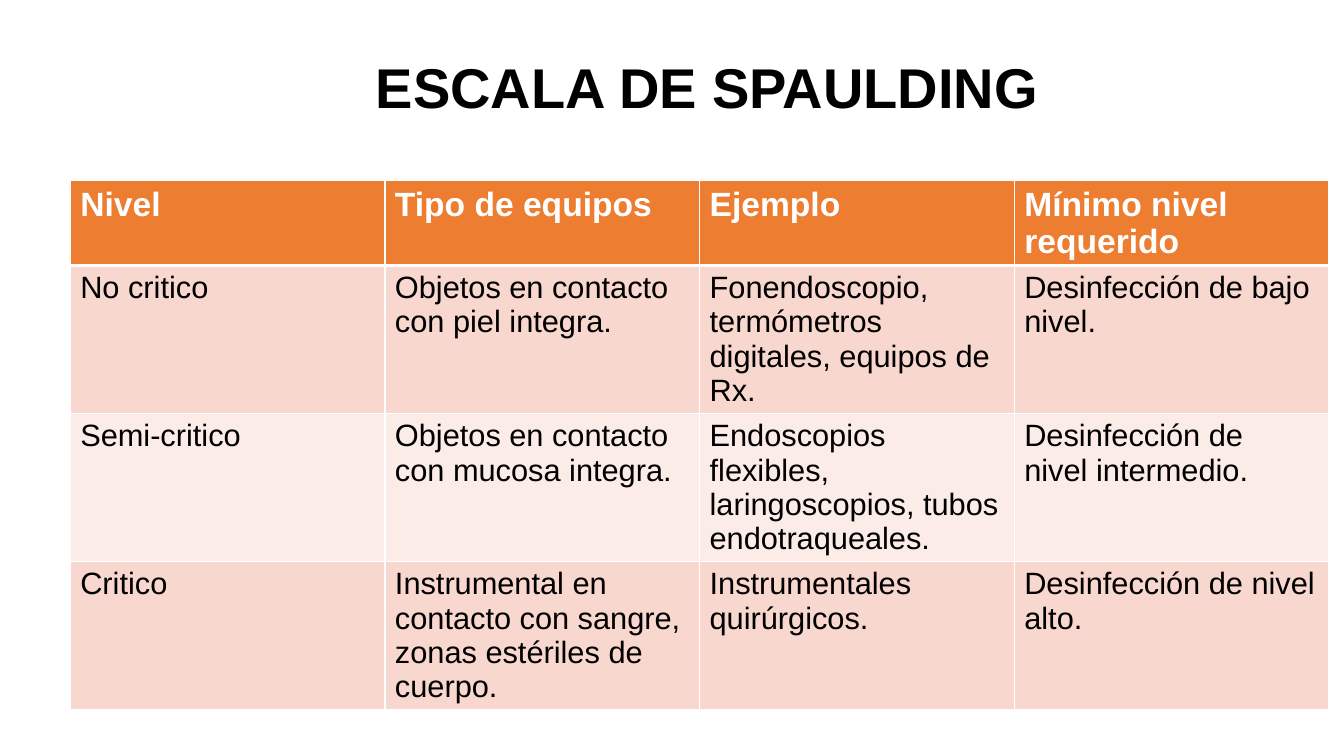
import dataclasses

import lxml.etree
import pptx
import pptx.dml.color
import pptx.enum.text
import pptx.oxml.ns
import pptx.util

Cm = pptx.util.Cm
Pt = pptx.util.Pt


@dataclasses.dataclass(frozen=True)
class Theme:
    font: str = "Arial"
    text: str = "000000"
    light: str = "FFFFFF"
    header: str = "ED7D31"
    bands: tuple = ("F8D7CE", "FCECE8")
    title_size: int = 40
    header_size: int = 24
    body_size: int = 22
    border: int = 1
    header_border: int = 3


@dataclasses.dataclass(frozen=True)
class Box:
    left: float
    top: float
    width: float
    height: float

    def lengths(self):
        return [Cm(value) for value in dataclasses.astuple(self)]


THEME = Theme()
HEADER_HEIGHT = 2.08

ROWS = (
    ("Nivel", "Tipo de equipos", "Ejemplo", "Mínimo nivel requerido"),
    ("No critico", "Objetos en contacto con piel integra.",
     "Fonendoscopio, termómetros digitales, equipos de Rx.",
     "Desinfección de bajo nivel."),
    ("Semi-critico", "Objetos en contacto con mucosa integra.",
     "Endoscopios flexibles, laringoscopios, tubos endotraqueales.",
     "Desinfección de\nnivel intermedio."),
    ("Critico", "Instrumental en contacto con sangre, zonas estériles de cuerpo.",
     "Instrumentales quirúrgicos.", "Desinfección de nivel alto."),
)


def write_text(frame, text, *, size, color=THEME.text, bold=False,
               align=pptx.enum.text.PP_ALIGN.LEFT, spacing=1.0):
    paragraph = frame.paragraphs[0]
    paragraph.text = text
    paragraph.alignment = align
    paragraph.line_spacing = spacing
    for run in paragraph.runs:
        run.font.name = THEME.font
        run.font.size = Pt(size)
        run.font.bold = bold
        run.font.color.rgb = pptx.dml.color.RGBColor.from_string(color)


def fill_cell(cell, color):
    cell.fill.solid()
    cell.fill.fore_color.rgb = pptx.dml.color.RGBColor.from_string(color)


def set_borders(cell, top, bottom):
    name = pptx.oxml.ns.qn
    properties = cell._tc.get_or_add_tcPr()
    widths = {"a:lnL": THEME.border, "a:lnR": THEME.border,
              "a:lnT": top, "a:lnB": bottom}
    for index, (side, width) in enumerate(widths.items()):
        line = lxml.etree.Element(name(side), w=str(Pt(width)))
        fill = lxml.etree.SubElement(line, name("a:solidFill"))
        lxml.etree.SubElement(fill, name("a:srgbClr"), val=THEME.light)
        properties.insert(index, line)


def add_title(slide, box, text):
    title = slide.shapes.title
    title.left, title.top, title.width, title.height = box.lengths()
    title.text_frame.vertical_anchor = pptx.enum.text.MSO_ANCHOR.MIDDLE
    title.text_frame.word_wrap = True
    write_text(title.text_frame, text, size=THEME.title_size, bold=True,
               align=pptx.enum.text.PP_ALIGN.CENTER, spacing=0.9)


def add_scale_table(slide, box, rows):
    table = slide.shapes.add_table(len(rows), len(rows[0]), *box.lengths()).table
    for column in table.columns:
        column.width = Cm(box.width / len(rows[0]))
    for row_index, texts in enumerate(rows):
        is_header = row_index == 0
        body_height = (box.height - HEADER_HEIGHT) / (len(rows) - 1)
        table.rows[row_index].height = Cm(HEADER_HEIGHT if is_header else body_height)
        background = THEME.header if is_header else THEME.bands[(row_index - 1) % 2]
        for column_index, text in enumerate(texts):
            cell = table.cell(row_index, column_index)
            write_text(cell.text_frame, text, bold=is_header,
                       size=THEME.header_size if is_header else THEME.body_size,
                       color=THEME.light if is_header else THEME.text)
            fill_cell(cell, background)
            set_borders(cell,
                        top=THEME.header_border if row_index == 1 else THEME.border,
                        bottom=THEME.header_border if is_header else THEME.border)


def main():
    presentation = pptx.Presentation()
    presentation.slide_width = Cm(33.87)
    presentation.slide_height = Cm(19.05)
    slide = presentation.slides.add_slide(presentation.slide_layouts[5])
    add_title(slide, Box(7.06, 0.89, 21.51, 2.77), "ESCALA DE SPAULDING")
    add_scale_table(slide, Box(1.77, 4.55, 31.72, 13.27), ROWS)
    presentation.save("out.pptx")


if __name__ == "__main__":
    main()
